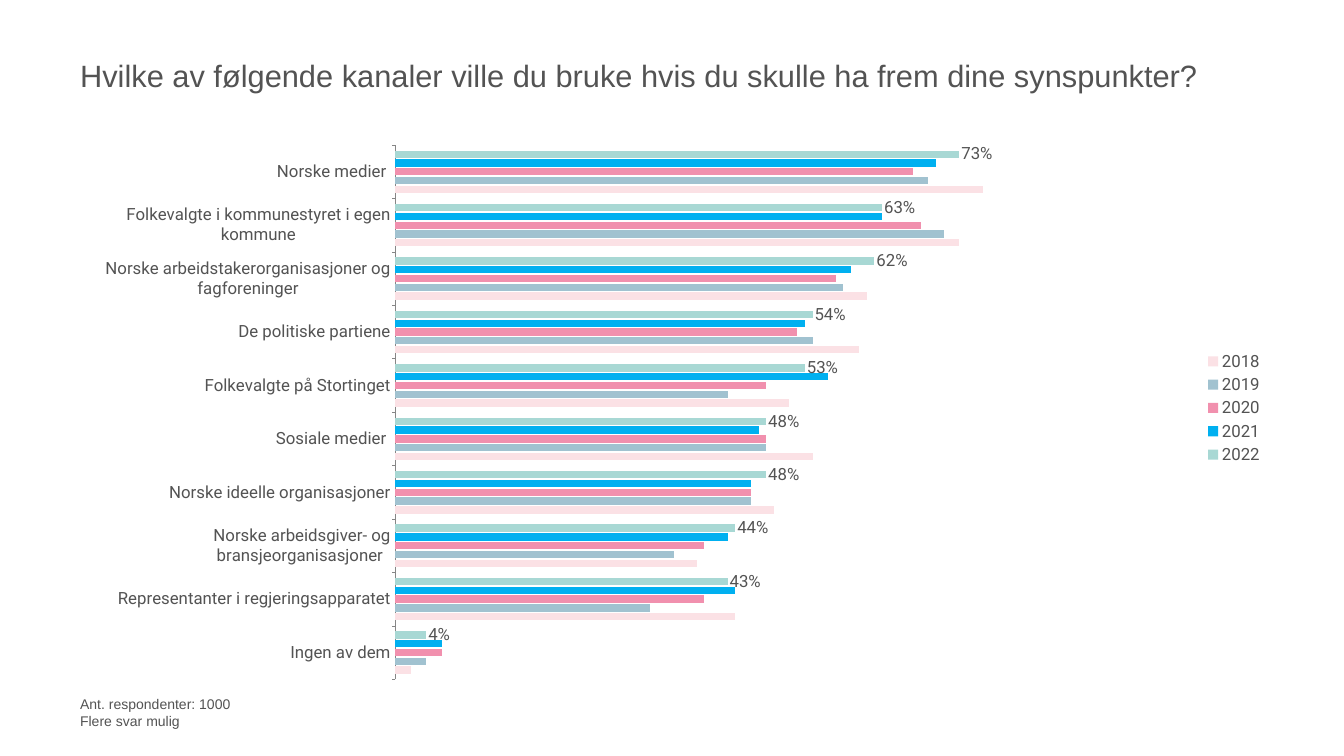
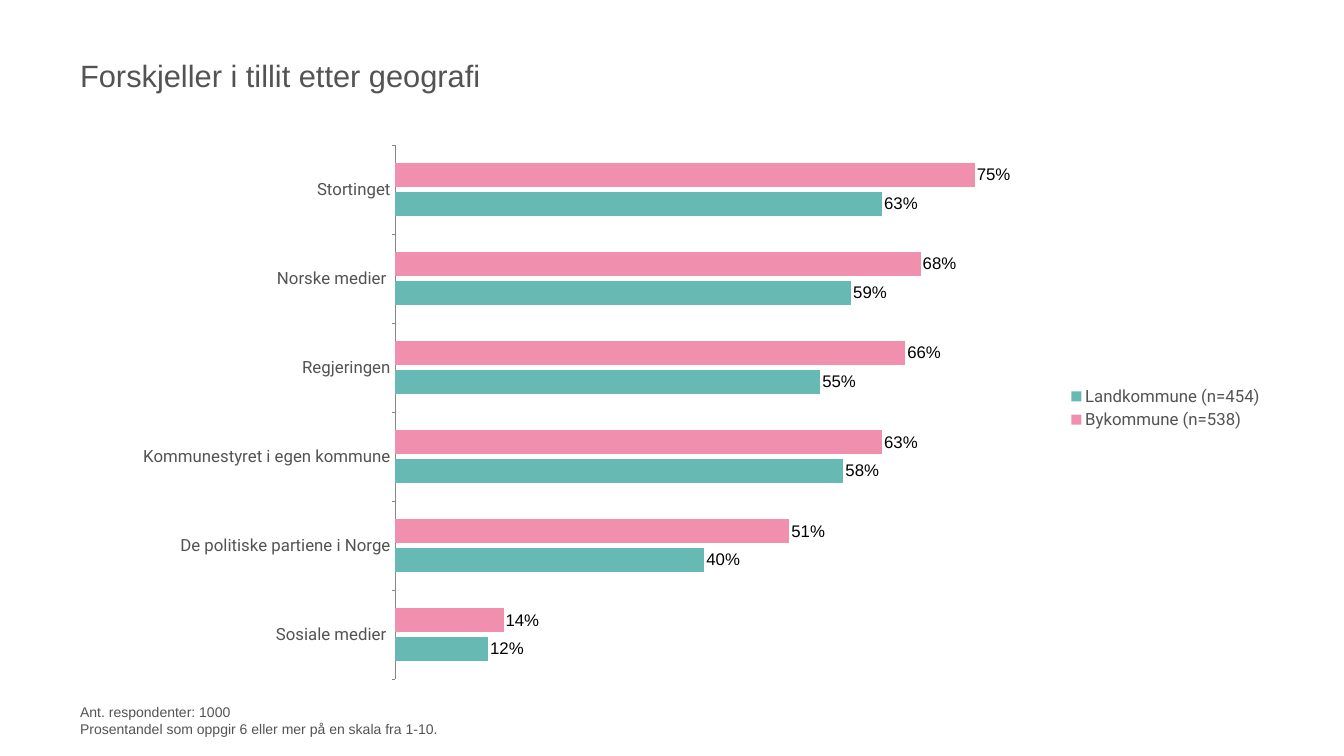
from lxml import etree
from pptx import Presentation
from pptx.chart.data import CategoryChartData
from pptx.dml.color import RGBColor
from pptx.enum.chart import (XL_CHART_TYPE, XL_LABEL_POSITION, XL_LEGEND_POSITION,
                             XL_TICK_LABEL_POSITION, XL_TICK_MARK)
from pptx.enum.text import MSO_ANCHOR
from pptx.oxml.ns import qn
from pptx.util import Inches, Pt

BAR_CLUSTERED = XL_CHART_TYPE.BAR_CLUSTERED
OUTSIDE_END = XL_LABEL_POSITION.OUTSIDE_END
LEGEND_RIGHT = XL_LEGEND_POSITION.RIGHT
LABELS_LOW = XL_TICK_LABEL_POSITION.LOW
TICK_OUTSIDE = XL_TICK_MARK.OUTSIDE
TICK_NONE = XL_TICK_MARK.NONE
MIDDLE = MSO_ANCHOR.MIDDLE

TEXT_GREY = RGBColor(0x53, 0x53, 0x53)
AXIS_GREY = RGBColor(0x86, 0x86, 0x86)
BLACK = RGBColor(0x00, 0x00, 0x00)
MINT = RGBColor(0xA8, 0xD8, 0xD4)
TEAL = RGBColor(0x66, 0xBA, 0xB3)
BLUE = RGBColor(0x00, 0xB0, 0xF0)
PINK = RGBColor(0xF1, 0x90, 0xAE)
GREY_BLUE = RGBColor(0xA1, 0xC2, 0xD0)
PALE_PINK = RGBColor(0xFB, 0xE1, 0xE5)

BODY_FONT = "Arial"
CHART_FONT = "Roboto"
LEFT, WIDTH = 1.53, 23.66
PLOT_AREA = {"x": 0.267, "y": 0.033, "w": 0.648, "h": 0.949}

CHANNELS = ["Norske medier ", "Folkevalgte i kommunestyret i egen kommune",
            "Norske arbeidstakerorganisasjoner og fagforeninger",
            "De politiske partiene", "Folkevalgte på Stortinget", "Sosiale medier ",
            "Norske ideelle organisasjoner",
            "Norske arbeidsgiver- og bransjeorganisasjoner ",
            "Representanter i regjeringsapparatet", "Ingen av dem"]
# Each series: name, colour, whether its bars are labelled, values
CHANNEL_SERIES = [
    ("2022", MINT, True, [.73, .63, .62, .54, .53, .48, .48, .44, .43, .04]),
    ("2021", BLUE, False, [.70, .63, .59, .53, .56, .47, .46, .43, .44, .06]),
    ("2020", PINK, False, [.67, .68, .57, .52, .48, .48, .46, .40, .40, .06]),
    ("2019", GREY_BLUE, False, [.69, .71, .58, .54, .43, .48, .46, .36, .33, .04]),
    ("2018", PALE_PINK, False, [.76, .73, .61, .60, .51, .54, .49, .39, .44, .02]),
]
INSTITUTIONS = ["Stortinget", "Norske medier ", "Regjeringen",
                "Kommunestyret i egen kommune", "De politiske partiene i Norge",
                "Sosiale medier "]
INSTITUTION_SERIES = [
    ("Bykommune (n=538)", PINK, True, [.75, .68, .66, .63, .51, .14]),
    ("Landkommune (n=454)", TEAL, True, [.63, .59, .55, .58, .40, .12]),
]


class SurveyDeck:
    def __init__(self):
        self.deck = Presentation()
        self.deck.slide_width = Inches(26.67)
        self.deck.slide_height = Inches(15)
        self.page = None

    def add_page(self):
        self.page = self.deck.slides.add_slide(self.deck.slide_layouts[6])

    def set_font(self, font, size, colour=TEXT_GREY, name=BODY_FONT):
        font.size = Pt(size)
        font.name = name
        font.color.rgb = colour

    def add_text(self, lines, top, height, size):
        box = self.page.shapes.add_textbox(Inches(LEFT), Inches(top),
                                           Inches(WIDTH), Inches(height))
        frame = box.text_frame
        frame.word_wrap = True
        frame.vertical_anchor = MIDDLE
        frame.margin_left = frame.margin_right = Inches(0.06)
        frame.margin_top = frame.margin_bottom = Inches(0.06)
        frame.text = "\n".join(lines)
        for para in frame.paragraphs:
            self.set_font(para.font, size)

    def add_title(self, title):
        self.add_text([title], 0.47, 2.04, 44)

    def add_footnote(self, lines, top):
        self.add_text(lines, top, 0.9, 20)

    def add_bar_chart(self, categories, series_rows, label_colour, label_font):
        data = CategoryChartData(number_format="0%")
        data.categories = categories
        for name, _, _, values in series_rows:
            data.add_series(name, values)
        chart = self.page.shapes.add_chart(BAR_CLUSTERED, Inches(LEFT), Inches(2.51),
                                           Inches(WIDTH), Inches(11.17), data).chart
        self.set_font(chart.font, 10, BLACK)
        chart.has_title = False
        plot = chart.plots[0]
        plot.gap_width = 150
        plot.overlap = -20
        plot.vary_by_categories = False
        for series, (_, colour, labelled, _) in zip(plot.series, series_rows):
            series.format.fill.solid()
            series.format.fill.fore_color.rgb = colour
            series.invert_if_negative = False
            if labelled:
                labels = series.data_labels
                labels.show_value = True
                labels.number_format = "0%"
                labels.number_format_is_linked = False
                labels.position = OUTSIDE_END
                self.set_font(labels.font, 24, label_colour, label_font)
        self.style_axes(chart)
        chart.has_legend = True
        chart.legend.position = LEGEND_RIGHT
        chart.legend.include_in_layout = False
        self.set_font(chart.legend.font, 24, name=CHART_FONT)
        self.fix_plot_area(chart)

    def style_axes(self, chart):
        names = chart.category_axis
        names.reverse_order = True
        names.has_major_gridlines = False
        names.major_tick_mark = TICK_OUTSIDE
        names.minor_tick_mark = TICK_NONE
        names.tick_label_position = LABELS_LOW
        names.format.line.color.rgb = AXIS_GREY
        names.format.line.width = Pt(0.75)
        self.set_font(names.tick_labels.font, 24, name=CHART_FONT)
        shares = chart.value_axis
        shares.visible = False
        shares.has_major_gridlines = False
        shares.minimum_scale = 0
        shares.maximum_scale = 1

    def fix_plot_area(self, chart):
        """Pin the inner plot area to fixed fractions of the chart."""
        area = chart.plots[0]._element.getparent()
        for old_layout in area.findall(qn("c:layout")):
            area.remove(old_layout)
        layout = etree.Element(qn("c:layout"))
        area.insert(0, layout)
        manual = etree.SubElement(layout, qn("c:manualLayout"))
        settings = {"layoutTarget": "inner", "xMode": "edge", "yMode": "edge", **PLOT_AREA}
        for tag, value in settings.items():
            etree.SubElement(manual, qn(f"c:{tag}")).set("val", str(value))


def main():
    survey = SurveyDeck()

    survey.add_page()
    survey.add_title("Hvilke av følgende kanaler ville du bruke hvis du skulle ha frem "
                     "dine synspunkter?")
    survey.add_bar_chart(CHANNELS, CHANNEL_SERIES, TEXT_GREY, CHART_FONT)
    survey.add_footnote(["Ant. respondenter: 1000", "Flere svar mulig"], 13.68)

    survey.add_page()
    survey.add_title("Forskjeller i tillit etter geografi")
    survey.add_bar_chart(INSTITUTIONS, INSTITUTION_SERIES, BLACK, BODY_FONT)
    survey.add_footnote(["Ant. respondenter: 1000",
                         "Prosentandel som oppgir 6 eller mer på en skala fra 1-10."], 13.85)

    survey.deck.save("out.pptx")


if __name__ == "__main__":
    main()
